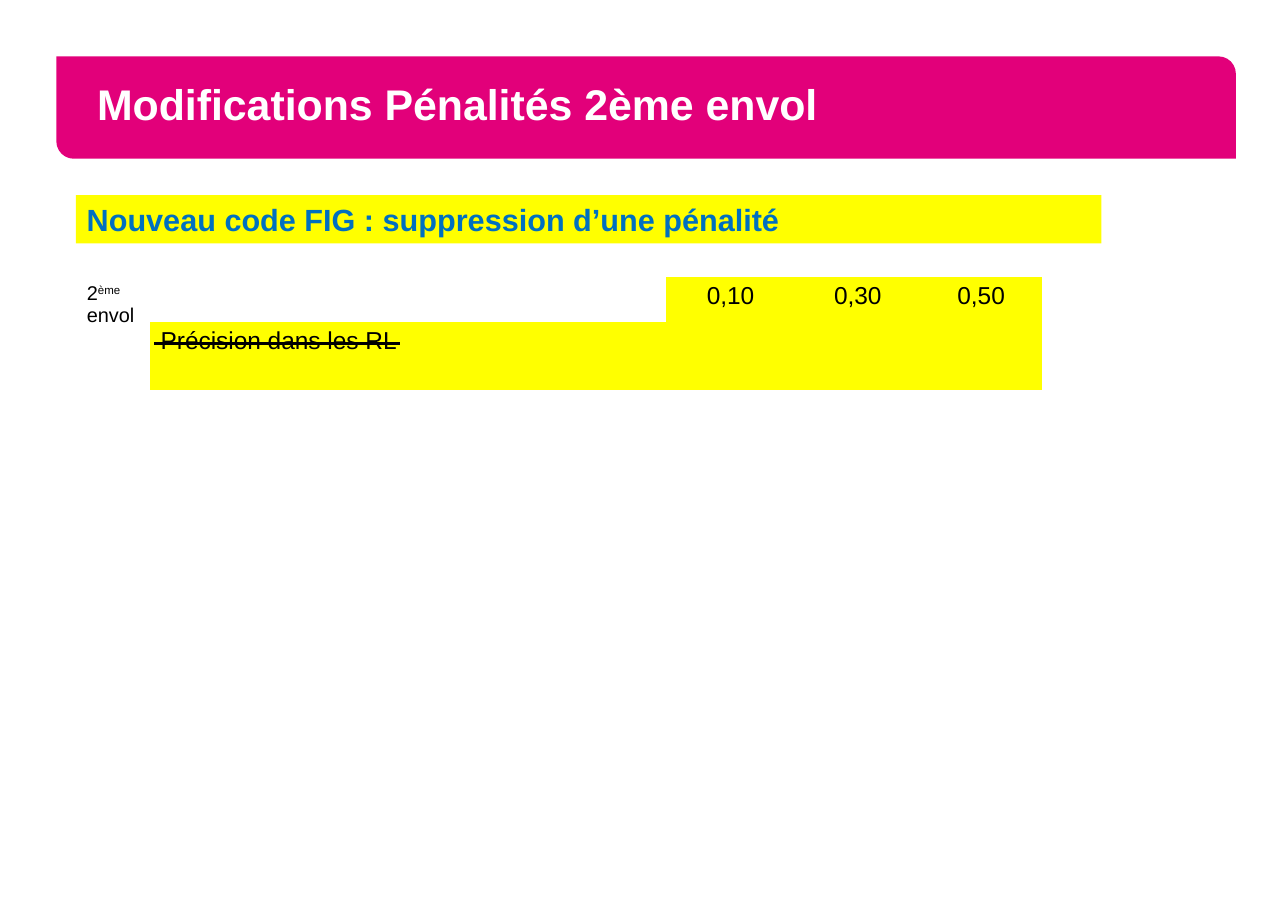
from dataclasses import dataclass

from lxml.etree import SubElement
from pptx import Presentation
from pptx.dml.color import RGBColor
from pptx.enum.shapes import MSO_CONNECTOR, MSO_SHAPE
from pptx.enum.text import MSO_ANCHOR, PP_ALIGN
from pptx.oxml.ns import qn
from pptx.util import Cm, Pt


@dataclass(frozen=True)
class Theme:
    font: str = "Arial"
    magenta: RGBColor = RGBColor(0xE2, 0x00, 0x7A)
    yellow: RGBColor = RGBColor(0xFF, 0xFF, 0x00)
    blue: RGBColor = RGBColor(0x00, 0x70, 0xC0)
    white: RGBColor = RGBColor(0xFF, 0xFF, 0xFF)
    black: RGBColor = RGBColor(0x00, 0x00, 0x00)
    title_size: Pt = Pt(28)
    subtitle_size: Pt = Pt(20)
    cell_size: Pt = Pt(16)
    label_size: Pt = Pt(13)
    strike_width: Pt = Pt(2.25)


@dataclass(frozen=True)
class Box:
    left: float
    top: float
    width: float
    height: float

    def lengths(self) -> list:
        return [Cm(v) for v in (self.left, self.top, self.width, self.height)]


@dataclass(frozen=True)
class PenaltyCell:
    row: int
    column: int
    text: str = ""
    align: PP_ALIGN = PP_ALIGN.LEFT


THEME = Theme()
NO_GRID_STYLE = "{2D5ABB26-0587-4C30-8999-92F81FD0307C}"
COLUMN_WIDTHS = (1.7, 11.91, 2.97, 2.9, 2.79)
ROW_HEIGHTS = (1.04, 1.55)
PENALTY_CELLS = (
    PenaltyCell(0, 2, "0,10", PP_ALIGN.CENTER),
    PenaltyCell(0, 3, "0,30", PP_ALIGN.CENTER),
    PenaltyCell(0, 4, "0,50", PP_ALIGN.CENTER),
    PenaltyCell(1, 1, "Précision dans les RL"),
    PenaltyCell(1, 2),
    PenaltyCell(1, 3),
    PenaltyCell(1, 4),
)


def style_paragraph(paragraph, size: Pt, color: RGBColor, bold: bool = False) -> None:
    font = paragraph.font
    font.name, font.size, font.bold = THEME.font, size, bold
    font.color.rgb = color


def add_panel(slide, kind: MSO_SHAPE, box: Box, color: RGBColor):
    panel = slide.shapes.add_shape(kind, *box.lengths())
    panel.shadow.inherit = False
    panel.fill.solid()
    panel.fill.fore_color.rgb = color
    panel.line.fill.background()
    return panel


def add_title(slide, text: str) -> None:
    banner = add_panel(slide, MSO_SHAPE.ROUND_2_DIAG_RECTANGLE,
                       Box(1.3, 1.3, 27.2, 2.36), THEME.magenta)
    banner.adjustments[0] = 0
    banner.adjustments[1] = 0.17

    title = slide.shapes.add_textbox(*Box(1.24, 1.32, 27.2, 2.36).lengths())
    frame = title.text_frame
    frame.word_wrap = True
    frame.vertical_anchor = MSO_ANCHOR.MIDDLE
    frame.margin_left = frame.margin_right = Cm(1)
    paragraph = frame.paragraphs[0]
    paragraph.text = text
    paragraph.line_spacing = 0.79
    style_paragraph(paragraph, THEME.title_size, THEME.white, bold=True)


def add_subtitle(slide, text: str) -> None:
    strip = add_panel(slide, MSO_SHAPE.RECTANGLE, Box(1.75, 4.5, 23.65, 1.11), THEME.yellow)
    strip.text_frame.word_wrap = True
    strip.text_frame.vertical_anchor = MSO_ANCHOR.TOP
    paragraph = strip.text_frame.paragraphs[0]
    paragraph.text = text
    paragraph.alignment = PP_ALIGN.LEFT
    style_paragraph(paragraph, THEME.subtitle_size, THEME.blue, bold=True)


def add_penalties(slide) -> None:
    box = Box(1.75, 6.39, sum(COLUMN_WIDTHS), sum(ROW_HEIGHTS))
    frame = slide.shapes.add_table(len(ROW_HEIGHTS), len(COLUMN_WIDTHS), *box.lengths())
    penalties = frame.table
    penalties.first_row = penalties.horz_banding = False
    penalties._tbl.tblPr.find(qn("a:tableStyleId")).text = NO_GRID_STYLE
    for column, width in zip(penalties.columns, COLUMN_WIDTHS):
        column.width = Cm(width)
    for row, height in zip(penalties.rows, ROW_HEIGHTS):
        row.height = Cm(height)
    for cell in penalties.iter_cells():
        cell.fill.background()
        style_paragraph(cell.text_frame.paragraphs[0], THEME.cell_size, THEME.black)

    # Flight label, spanning both rows
    flight = penalties.cell(0, 0)
    flight.merge(penalties.cell(1, 0))
    label = flight.text_frame.paragraphs[0]
    style_paragraph(label, THEME.label_size, THEME.black)
    for text, baseline in (("2", 0), ("ème", 30000), (" envol", 0)):
        run = label.add_run()
        run.text = text
        if baseline:
            run._r.get_or_add_rPr().set("baseline", str(baseline))

    # Highlighted cells
    for item in PENALTY_CELLS:
        cell = penalties.cell(item.row, item.column)
        cell.fill.solid()
        cell.fill.fore_color.rgb = THEME.yellow
        paragraph = cell.text_frame.paragraphs[0]
        paragraph.alignment = item.align
        if item.text:
            paragraph.add_run().text = item.text


def add_strike(slide) -> None:
    strike = slide.shapes.add_connector(MSO_CONNECTOR.STRAIGHT,
                                        Cm(3.56), Cm(7.92), Cm(9.22), Cm(7.92))
    strike.line.color.rgb = THEME.black
    strike.line.width = THEME.strike_width
    SubElement(strike._element.spPr, qn("a:effectLst"))


def main() -> None:
    presentation = Presentation()
    presentation.slide_width, presentation.slide_height = Cm(29.7), Cm(21)
    slide = presentation.slides.add_slide(presentation.slide_layouts[6])

    # Heading
    add_title(slide, "Modifications Pénalités 2ème envol")
    add_subtitle(slide, "Nouveau code FIG : suppression d’une pénalité")

    # Penalty table with the removed entry struck out
    add_penalties(slide)
    add_strike(slide)

    presentation.save("out.pptx")


if __name__ == "__main__":
    main()
